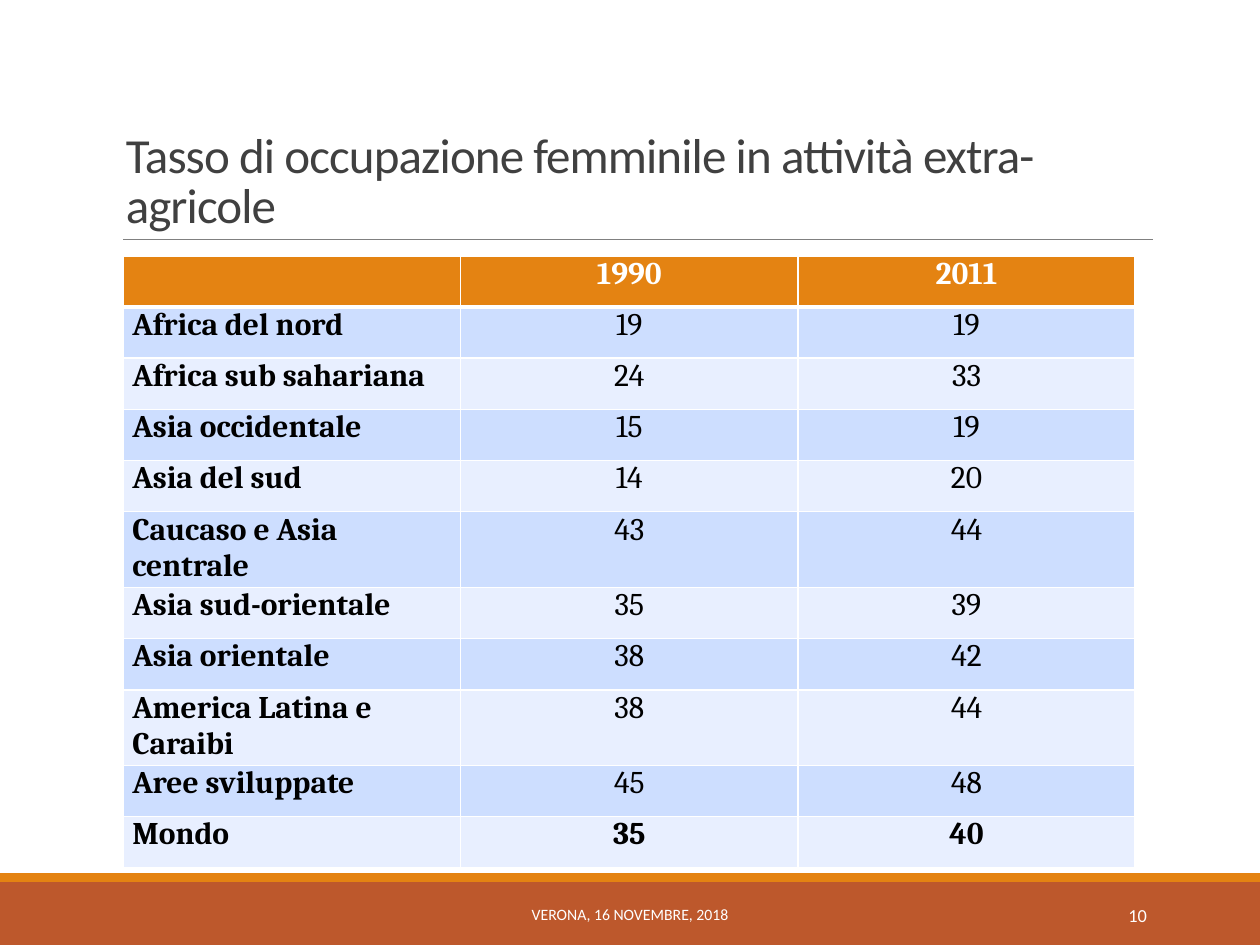
from lxml import etree
from pptx import Presentation
from pptx.dml.color import RGBColor
from pptx.enum.shapes import MSO_CONNECTOR, MSO_SHAPE
from pptx.enum.text import MSO_ANCHOR, PP_ALIGN
from pptx.oxml.ns import qn
from pptx.util import Inches, Pt

RECT = MSO_SHAPE.RECTANGLE
STRAIGHT = MSO_CONNECTOR.STRAIGHT
LEFT, CENTER, RIGHT = PP_ALIGN.LEFT, PP_ALIGN.CENTER, PP_ALIGN.RIGHT
MIDDLE, BOTTOM = MSO_ANCHOR.MIDDLE, MSO_ANCHOR.BOTTOM

COLORS = {
    "white": "FFFFFF", "black": "000000", "title": "404040", "rule": "808080",
    "orange": "E48312", "rust": "BD582C", "band": "CDDEFF", "pale": "E8EFFF",
}
HEADER = ["", "1990", "2011"]
RATES = [
    ("Africa del nord", 19, 19),
    ("Africa sub sahariana", 24, 33),
    ("Asia occidentale", 15, 19),
    ("Asia del sud", 14, 20),
    ("Caucaso e Asia centrale", 43, 44),
    ("Asia sud-orientale", 35, 39),
    ("Asia orientale", 38, 42),
    ("America Latina e Caraibi", 38, 44),
    ("Aree sviluppate", 45, 48),
    ("Mondo", 35, 40),
]
TWO_LINE_ROWS = {5, 8}
TWO_LINE_HEIGHT = 0.6


def rgb(name):
    return RGBColor.from_string(COLORS[name])


class SlideBuilder:
    body_font = "Calibri"
    table_font = "Cambria"

    def __init__(self, slide):
        self.s = slide

    def style(self, p, font, size, color, align=LEFT, bold=False):
        p.alignment = align
        p.font.name, p.font.size, p.font.bold = font, Pt(size), bold
        p.font.color.rgb = rgb(color)

    def bar(self, top, height, color):
        sp = self.s.shapes.add_shape(RECT, 0, Inches(top), Inches(10), Inches(height))
        sp.shadow.inherit = False
        sp.fill.solid()
        sp.fill.fore_color.rgb = rgb(color)
        sp.line.fill.background()

    def rule(self, left, right, y):
        line = self.s.shapes.add_connector(
            STRAIGHT, Inches(left), Inches(y), Inches(right), Inches(y))
        line.line.color.rgb = rgb("rule")
        line.line.width = Pt(0.5)
        etree.SubElement(line._element.spPr, qn("a:effectLst"))

    def text(self, box, text, size, color, align=LEFT, anchor=MIDDLE):
        sp = self.s.shapes.add_textbox(*map(Inches, box))
        tf = sp.text_frame
        tf.word_wrap = True
        tf.vertical_anchor = anchor
        p = tf.paragraphs[0]
        r = p.add_run()
        r.text = text
        self.style(p, self.body_font, size, color, align)
        return p

    def title(self, box, text):
        p = self.text(box, text, 28, "title", anchor=BOTTOM)
        p.line_spacing = 0.85
        p.runs[0]._r.get_or_add_rPr().set("spc", "-50")

    def borders(self, cell, top, bottom):
        """Draw white cell borders; top and bottom are widths in points."""
        tc_pr = cell._tc.get_or_add_tcPr()
        for side, width in (("L", 1), ("R", 1), ("T", top), ("B", bottom)):
            ln = etree.SubElement(tc_pr, qn(f"a:ln{side}"), w=str(Pt(width)))
            fill = etree.SubElement(ln, qn("a:solidFill"))
            etree.SubElement(fill, qn("a:srgbClr"), val=COLORS["white"])

    def cell(self, cell, text, color, fill, align, bold):
        cell.margin_left = cell.margin_right = Inches(0.07)
        cell.margin_top = cell.margin_bottom = 0
        cell.fill.solid()
        cell.fill.fore_color.rgb = rgb(fill)
        p = cell.text_frame.paragraphs[0]
        p.space_after = Pt(10)
        self.style(p, self.table_font, 18, color, align, bold)
        if text:
            p.add_run().text = text

    def table(self, box, rows):
        left, top, width, height = box
        n_rows, n_cols = len(rows), len(rows[0])
        table = self.s.shapes.add_table(n_rows, n_cols, *map(Inches, box)).table
        table.horz_banding = False
        for column in table.columns:
            column.width = Inches(width / n_cols)
        tall = len(TWO_LINE_ROWS)
        row_height = (height - tall * TWO_LINE_HEIGHT) / (n_rows - tall)
        for i, row in enumerate(rows):
            table.rows[i].height = Inches(
                TWO_LINE_HEIGHT if i in TWO_LINE_ROWS else row_height)
            head = i == 0
            fill = "orange" if head else ("pale", "band")[i % 2]
            for j, value in enumerate(row):
                cell = table.cell(i, j)
                self.borders(cell, 3 if i == 1 else 1, 3 if head else 1)
                self.cell(cell, str(value), "white" if head else "black", fill,
                          CENTER if j else LEFT,
                          head or j == 0 or i == n_rows - 1)


def main():
    prs = Presentation()
    prs.slide_width, prs.slide_height = Inches(10), Inches(7.5)
    b = SlideBuilder(prs.slides.add_slide(prs.slide_layouts[6]))
    b.bar(7, 0.5, "rust")
    b.bar(6.93, 0.07, "orange")
    b.rule(0.98, 9.15, 1.9)
    b.title((0.9, 0.31, 8.25, 1.59),
            "Tasso di occupazione femminile in attività extra-agricole")
    b.table((0.98, 2.03, 8.03, 4.86), [HEADER, *RATES])
    b.text((8.12, 7.06, 1.08, 0.4), "10", 10.5, "white", RIGHT)
    b.text((3.02, 7.06, 3.96, 0.4), "VERONA, 16 NOVEMBRE, 2018", 9, "white", CENTER)
    prs.save("out.pptx")


if __name__ == "__main__":
    main()
